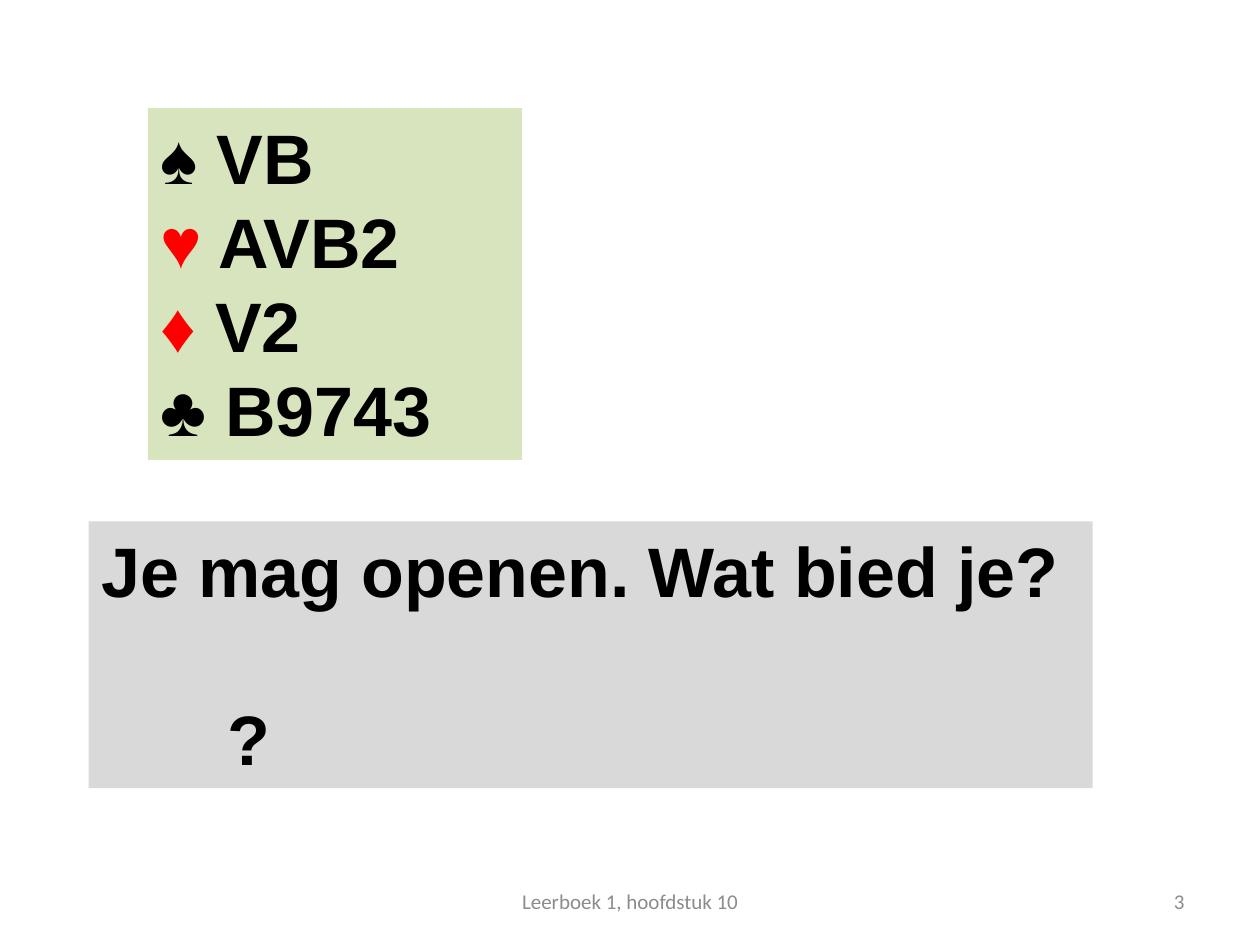
from pptx import Presentation
from pptx.dml.color import RGBColor
from pptx.enum.shapes import MSO_SHAPE as Shape
from pptx.enum.text import MSO_ANCHOR as Anchor, PP_ALIGN as Align
from pptx.util import Cm, Pt

BLACK = RGBColor(0x00, 0x00, 0x00)
RED = RGBColor(0xFF, 0x00, 0x00)
GREEN = RGBColor(0xD7, 0xE4, 0xBD)
GRAY = RGBColor(0xD9, 0xD9, 0xD9)
MUTED = RGBColor(0x8C, 0x8C, 0x8C)


def add_run(para, text, color, size=40, font="Arial", bold=True):
    run = para.add_run()
    run.text = text
    run.font.name = font
    run.font.size = Pt(size)
    run.font.bold = bold
    run.font.color.rgb = color


def add_panel(left, top, width, height, fill, lines):
    panel = slide.shapes.add_shape(
        Shape.RECTANGLE, Cm(left), Cm(top), Cm(width), Cm(height))
    panel.shadow.inherit = False
    panel.fill.solid()
    panel.fill.fore_color.rgb = fill
    panel.line.fill.background()
    frame = panel.text_frame
    frame.word_wrap = True
    frame.vertical_anchor = Anchor.TOP
    for i, runs in enumerate(lines):
        para = frame.add_paragraph() if i else frame.paragraphs[0]
        para.alignment = Align.LEFT
        para.line_spacing = Pt(48)
        for text, color in runs:
            add_run(para, text, color)
    return frame


prs = Presentation()
prs.slide_width, prs.slide_height = Cm(25.4), Cm(19.05)
slide = prs.slides.add_slide(prs.slide_layouts[6])

# Bridge hand, one suit per line
add_panel(2.98, 2.18, 7.54, 7.09, GREEN, [
    [("♠ VB", BLACK)],
    [("♥", RED), (" AVB2", BLACK)],
    [("♦", RED), (" V2", BLACK)],
    [("♣ B9743", BLACK)],
])

# Question, with an indented answer line and room above it
quiz = add_panel(1.79, 10.51, 20.24, 5.38, GRAY, [
    [("Je mag openen. Wat bied je?", BLACK)],
    [("?", BLACK)],
])
reply = quiz.paragraphs[1]
reply.space_before = Pt(48)
reply._p.get_or_add_pPr().set("marL", str(Cm(2.54)))

# Slide number and footer
for left, width, align, text in [
    (18.21, 5.92, Align.RIGHT, "3"),
    (8.68, 8.05, Align.CENTER, "Leerboek 1, hoofdstuk 10"),
]:
    box = slide.shapes.add_textbox(Cm(left), Cm(17.65), Cm(width), Cm(1.02))
    frame = box.text_frame
    frame.word_wrap = True
    frame.vertical_anchor = Anchor.MIDDLE
    para = frame.paragraphs[0]
    para.alignment = align
    add_run(para, text, MUTED, 12, "Calibri", False)

prs.save("out.pptx")
